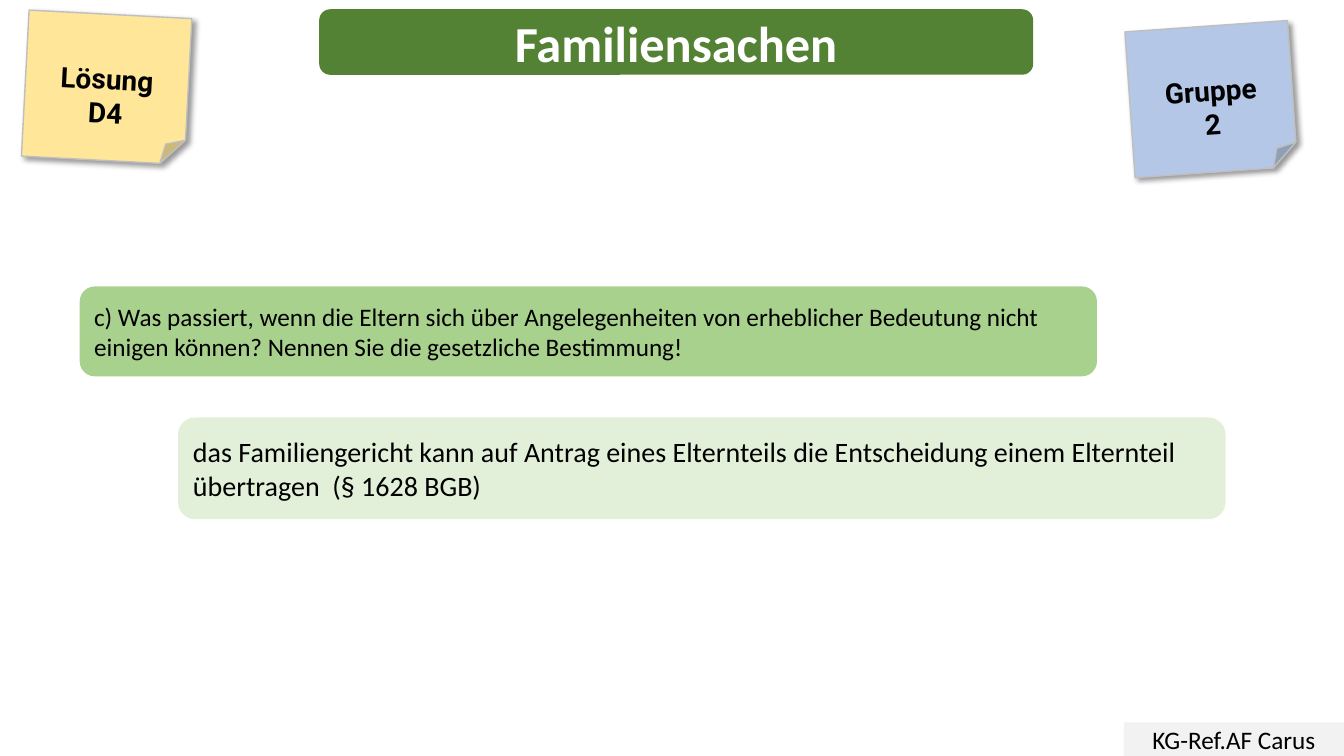
from dataclasses import dataclass

from lxml import etree
from pptx import Presentation
from pptx.dml.color import RGBColor
from pptx.enum.shapes import MSO_SHAPE
from pptx.enum.text import MSO_ANCHOR, PP_ALIGN
from pptx.oxml.ns import qn
from pptx.util import Inches, Pt

RECTANGLE = MSO_SHAPE.RECTANGLE
ROUNDED = MSO_SHAPE.ROUNDED_RECTANGLE
FOLDED = MSO_SHAPE.FOLDED_CORNER
LEFT, CENTER = PP_ALIGN.LEFT, PP_ALIGN.CENTER
MIDDLE = MSO_ANCHOR.MIDDLE

# The slide is a grid of 16 columns by 9 rows; boxes are (column, row, columns, rows).
COLUMNS, ROWS = 16, 9
SLIDE_WIDTH, SLIDE_HEIGHT = Inches(13.33), Inches(7.5)
NOTE_SIZE = (1.94, 1.74)


@dataclass(frozen=True)
class Theme:
    body_font: str = "Calibri"
    note_font: str = "Roboto"
    black: str = "000000"
    white: str = "FFFFFF"
    title_green: str = "548235"
    question_green: str = "A9D18E"
    answer_green: str = "E2F0D9"
    footer_gray: str = "F2F2F2"
    note_line: str = "BFBFBF"
    yellow: str = "FFE699"
    blue: str = "B4C7E7"
    title_size: int = 36
    large_size: int = 20
    body_size: int = 18


THEME = Theme()


def write_text(shape, lines, size=THEME.body_size, font=THEME.body_font,
               color=THEME.black, bold=False, align=CENTER):
    frame = shape.text_frame
    frame.word_wrap = True
    frame.vertical_anchor = MIDDLE
    for index, line in enumerate(lines):
        paragraph = frame.paragraphs[0] if index == 0 else frame.add_paragraph()
        paragraph.alignment = align
        run = paragraph.add_run()
        run.text = line
        run.font.name = font
        run.font.size = Pt(size)
        run.font.bold = bold
        run.font.color.rgb = RGBColor.from_string(color)


def add_panel(slide, box, kind, fill, lines, **text_format):
    """Place a filled, borderless shape with text in a grid box."""
    column, row, width, height = box
    cell_width, cell_height = SLIDE_WIDTH / COLUMNS, SLIDE_HEIGHT / ROWS
    shape = slide.shapes.add_shape(
        kind, round(column * cell_width), round(row * cell_height),
        round(width * cell_width), round(height * cell_height))
    shape.shadow.inherit = False
    shape.fill.solid()
    shape.fill.fore_color.rgb = RGBColor.from_string(fill)
    shape.line.fill.background()
    write_text(shape, lines, **text_format)
    return shape


def add_drop_shadow(shape, blur=4, distance=3, angle=45, opacity=40):
    effects = shape._element.spPr.find(qn("a:effectLst"))
    shadow = etree.SubElement(
        effects, qn("a:outerShdw"), blurRad=str(Pt(blur)), dist=str(Pt(distance)),
        dir=str(angle * 60000), algn="tl", rotWithShape="0")
    color = etree.SubElement(shadow, qn("a:srgbClr"), val=THEME.black)
    etree.SubElement(color, qn("a:alpha"), val=str(opacity * 1000))


def add_sticky_note(slide, corner, fill, lines, rotation):
    note = add_panel(slide, (*corner, *NOTE_SIZE), FOLDED, fill, lines,
                     size=THEME.large_size, font=THEME.note_font, bold=True)
    note.rotation = rotation
    note.line.color.rgb = RGBColor.from_string(THEME.note_line)
    note.line.width = Pt(1)
    note.text_frame.margin_top = Inches(0.45)
    add_drop_shadow(note)


def add_header(slide):
    add_panel(slide, (3.8, 0.11, 8.5, 0.78), ROUNDED, THEME.title_green,
              ["Familiensachen"], size=THEME.title_size, color=THEME.white, bold=True)
    add_sticky_note(slide, (0.3, 0.17), THEME.yellow, ["Lösung", "D4"], rotation=3)
    add_sticky_note(slide, (13.45, 0.31), THEME.blue, ["Gruppe", "2"], rotation=-4)


def add_question_and_answer(slide, question, answer):
    add_panel(slide, (0.95, 3.41, 12.11, 1.07), ROUNDED, THEME.question_green,
              [question], align=LEFT)
    add_panel(slide, (2.12, 4.97, 12.47, 1.21), ROUNDED, THEME.answer_green,
              [answer], size=THEME.large_size, align=LEFT)


def add_footer(slide):
    add_panel(slide, (13.38, 8.6, 2.62, 0.4), RECTANGLE, THEME.footer_gray,
              ["KG-Ref.AF Carus"])


def main():
    presentation = Presentation()
    presentation.slide_width, presentation.slide_height = SLIDE_WIDTH, SLIDE_HEIGHT
    slide = presentation.slides.add_slide(presentation.slide_layouts[6])
    add_header(slide)
    add_question_and_answer(
        slide,
        "c) Was passiert, wenn die Eltern sich über Angelegenheiten von erheblicher "
        "Bedeutung nicht einigen können? Nennen Sie die gesetzliche Bestimmung!",
        "das Familiengericht kann auf Antrag eines Elternteils die Entscheidung "
        "einem Elternteil übertragen  (§ 1628 BGB)")
    add_footer(slide)
    presentation.save("out.pptx")


if __name__ == "__main__":
    main()
